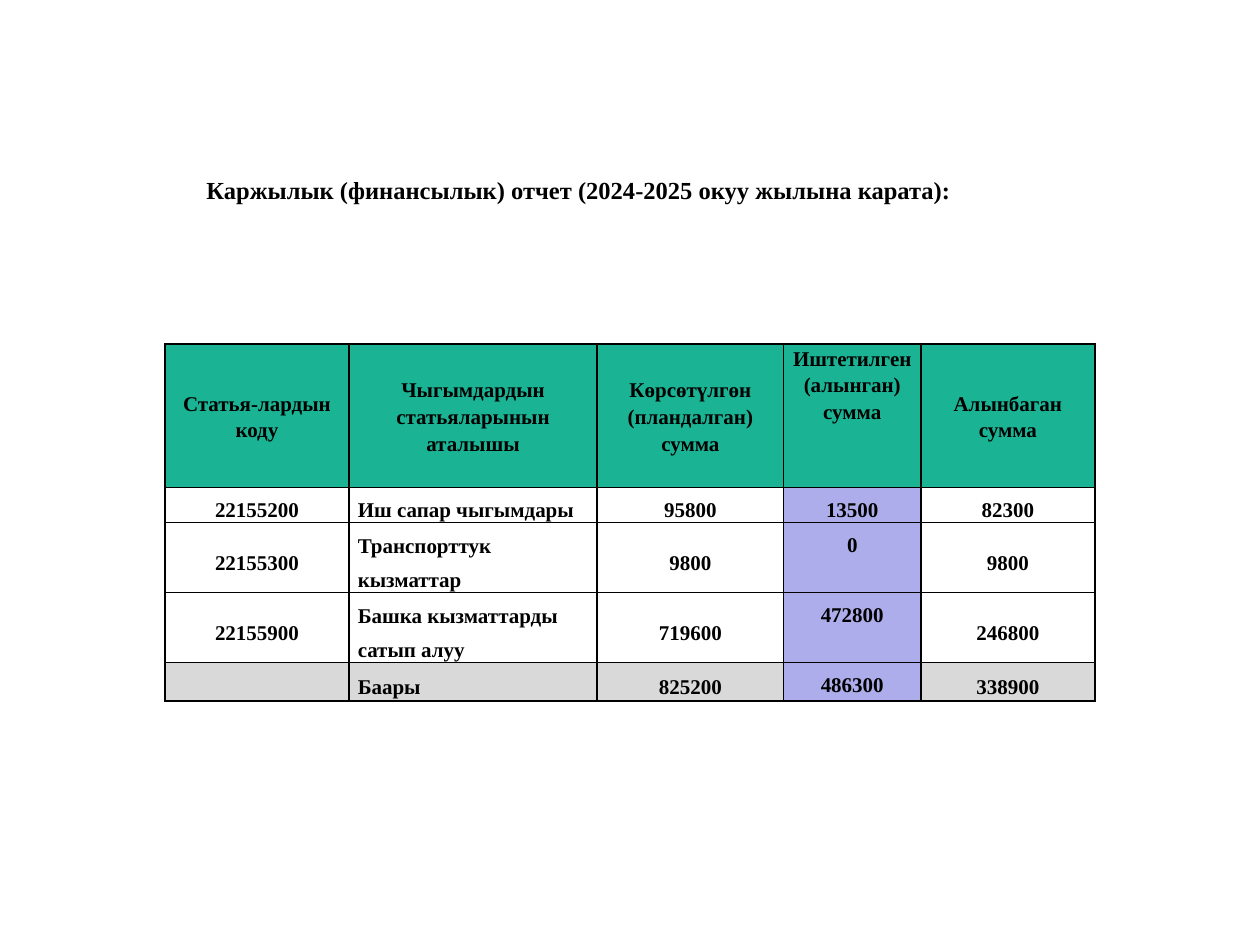
import pptx
import pptx.dml.color
import pptx.enum.text
import pptx.oxml
import pptx.oxml.ns
import pptx.util

Inches = pptx.util.Inches
Align = pptx.enum.text.PP_ALIGN
Anchor = pptx.enum.text.MSO_ANCHOR
HUES = {"ink": "000000", "head": "1AB394", "body": "FFFFFF",
        "spent": "ADADEB", "total": "D9D9D9"}
SPENT = 3  # column with its own fill and top anchor
WIDTHS = [1.46, 1.97, 1.48, 1.09, 1.38]
HEIGHTS = [1.14] + [0.2] * 4
ROWS = [
    ["Статья-лардын коду", "Чыгымдардын статьяларынын аталышы",
     "Көрсөтүлгөн (пландалган) сумма", "Иштетилген (алынган) сумма",
     "Алынбаган сумма"],
    ["22155200", "Иш сапар чыгымдары", "95800", "13500", "82300"],
    ["22155300", "Транспорттук кызматтар", "9800", "0", "9800"],
    ["22155900", "Башка кызматтарды сатып алуу", "719600", "472800", "246800"],
    ["", "Баары", "825200", "486300", "338900"],
]


def color(name):
    return pptx.dml.color.RGBColor.from_string(HUES[name])


def write(frame, text, size=12, align=Align.LEFT, space=1.0):
    para = frame.paragraphs[0]
    para.alignment = align
    para.line_spacing = space
    if not text:
        return
    run = para.add_run()
    run.text = text
    font = run.font
    font.name = "Times New Roman"
    font.size = pptx.util.Pt(size)
    font.bold = True
    font.color.rgb = color("ink")


class Deck:
    def __init__(self):
        self.show = pptx.Presentation()
        self.show.slide_width = Inches(10)
        self.show.slide_height = Inches(7.5)
        self.slide = self.show.slides.add_slide(self.show.slide_layouts[6])

    def label(self, text, left, top, width, height, **style):
        box = self.slide.shapes.add_textbox(
            Inches(left), Inches(top), Inches(width), Inches(height))
        frame = box.text_frame
        frame.word_wrap = True
        frame.margin_top = 0
        write(frame, text, **style)

    def border(self, cell):
        props = cell._tc.get_or_add_tcPr()
        for spot, side in enumerate(("lnL", "lnR", "lnT", "lnB")):
            line = pptx.oxml.parse_xml(
                f'<a:{side} {pptx.oxml.ns.nsdecls("a")} w="12700"><a:solidFill>'
                f'<a:srgbClr val="{HUES["ink"]}"/></a:solidFill></a:{side}>')
            props.insert(spot, line)

    def cell(self, cell, text, fill, anchor, **style):
        cell.fill.solid()
        cell.fill.fore_color.rgb = color(fill)
        cell.vertical_anchor = anchor
        cell.margin_left = cell.margin_right = Inches(0.07)
        cell.margin_top = cell.margin_bottom = 0
        write(cell.text_frame, text, **style)
        self.border(cell)

    def table(self, rows, left, top):
        grid = self.slide.shapes.add_table(
            len(rows), len(WIDTHS), Inches(left), Inches(top),
            Inches(sum(WIDTHS)), Inches(sum(HEIGHTS))).table
        for col, width in zip(grid.columns, WIDTHS):
            col.width = Inches(width)
        for row, height in zip(grid.rows, HEIGHTS):
            row.height = Inches(height)
        for r, row in enumerate(rows):
            base = "head" if r == 0 else "total" if r == len(rows) - 1 else "body"
            for c, text in enumerate(row):
                self.cell(
                    grid.cell(r, c), text,
                    fill="spent" if r and c == SPENT else base,
                    anchor=Anchor.TOP if c == SPENT else Anchor.MIDDLE,
                    align=Align.LEFT if r and c == 1 else Align.CENTER,
                    space=1.5 if r else 1.15)


def main():
    deck = Deck()
    # Budget table
    deck.table(ROWS, 1.31, 2.73)
    # Heading
    deck.label("Каржылык (финансылык) отчет (2024-2025 окуу жылына карата):",
               1.54, 1.39, 10, 0.5, size=14)
    deck.show.save("out.pptx")


if __name__ == "__main__":
    main()
